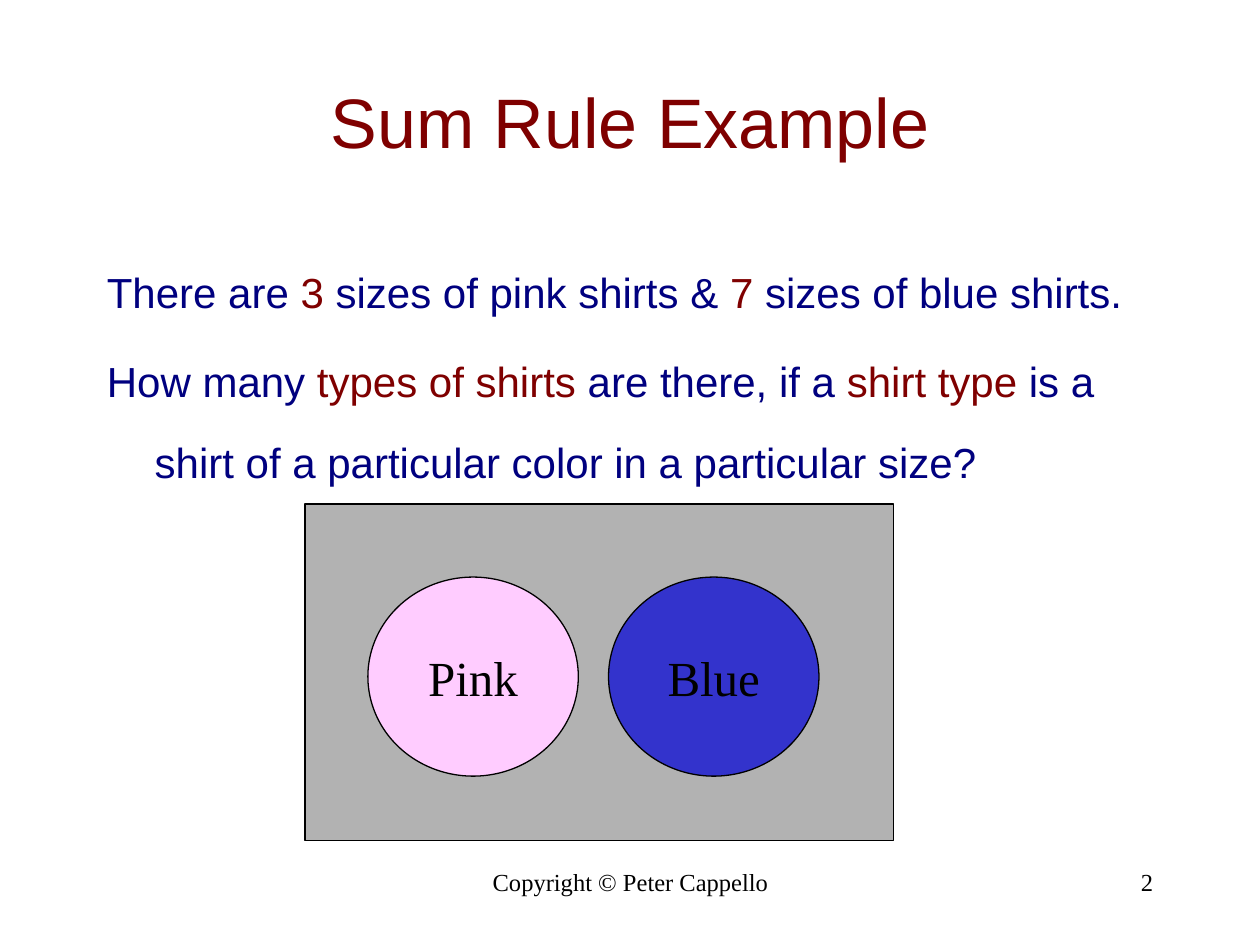
from pptx import Presentation
from pptx.dml.color import RGBColor
from pptx.enum.shapes import MSO_SHAPE as Shape
from pptx.enum.text import MSO_ANCHOR as Anchor, PP_ALIGN as Align
from pptx.util import Inches, Pt

SANS, SERIF = "Arial", "Times New Roman"
RED, NAVY, BLACK = "7F0000", "00007F", "000000"
GRAY, PINK, BLUE = "B2B2B2", "FFCCFF", "3333CC"

QUESTION = [
    [("There are ", NAVY), ("3", RED), (" sizes of pink shirts & ", NAVY),
     ("7", RED), (" sizes of blue shirts.", NAVY)],
    [("How many ", NAVY), ("types of shirts", RED), (" are there, if a ", NAVY),
     ("shirt type", RED),
     (" is a shirt of a particular color in a particular size?", NAVY)],
]


def color(value):
    """Turn a hex string into a colour."""
    return RGBColor.from_string(value)


def add_run(paragraph, text, size, font, hex_color):
    """Add one formatted run to a paragraph."""
    run = paragraph.add_run()
    run.text = text
    run.font.size = Pt(size)
    run.font.name = font
    run.font.color.rgb = color(hex_color)


def add_text_frame(slide, box, anchor=Anchor.TOP):
    """Add a wrapping text box and return its text frame."""
    frame = slide.shapes.add_textbox(*map(Inches, box)).text_frame
    frame.word_wrap = True
    frame.vertical_anchor = anchor
    return frame


def add_line(slide, box, text, size, font, hex_color, align, anchor=Anchor.TOP):
    """Add a text box that holds a single line."""
    paragraph = add_text_frame(slide, box, anchor).paragraphs[0]
    paragraph.alignment = align
    add_run(paragraph, text, size, font, hex_color)


def add_question(slide, box, paragraphs):
    """Add the body text with hanging indents and mixed colours."""
    frame = add_text_frame(slide, box)
    for index, runs in enumerate(paragraphs):
        paragraph = frame.add_paragraph() if index else frame.paragraphs[0]
        paragraph.line_spacing = 1.6
        paragraph.space_before = Pt(4.8)
        properties = paragraph._p.get_or_add_pPr()
        properties.set("marL", str(Inches(0.38)))
        properties.set("indent", str(Inches(-0.38)))
        for text, hex_color in runs:
            add_run(paragraph, text, 24, SANS, hex_color)


def add_outlined(slide, kind, box, fill, label=None):
    """Add a filled shape with a thin black outline and an optional label."""
    shape = slide.shapes.add_shape(kind, *map(Inches, box))
    shape.shadow.inherit = False
    shape.fill.solid()
    shape.fill.fore_color.rgb = color(fill)
    shape.line.color.rgb = color(BLACK)
    shape.line.width = Pt(0.75)
    if label:
        frame = shape.text_frame
        frame.word_wrap = False
        frame.vertical_anchor = Anchor.MIDDLE
        paragraph = frame.paragraphs[0]
        paragraph.alignment = Align.CENTER
        add_run(paragraph, label, 28, SERIF, BLACK)


def main():
    """Build the slide and save it."""
    presentation = Presentation()
    presentation.slide_width = Inches(10)
    presentation.slide_height = Inches(7.5)
    slide = presentation.slides.add_slide(presentation.slide_layouts[6])

    add_line(slide, (3.42, 6.83, 3.17, 0.5), "Copyright © Peter Cappello",
             14, SERIF, BLACK, Align.CENTER)
    add_line(slide, (7.17, 6.83, 2.08, 0.5), "2", 14, SERIF, BLACK, Align.RIGHT)
    add_line(slide, (0.75, 0.33, 8.5, 1.25), "Sum Rule Example",
             40, SANS, RED, Align.CENTER, Anchor.MIDDLE)
    add_question(slide, (0.75, 1.83, 8.5, 4.83), QUESTION)

    add_outlined(slide, Shape.RECTANGLE, (2.42, 4, 4.67, 2.67), GRAY)
    for left, fill, label in ((2.92, PINK, "Pink"), (4.83, BLUE, "Blue")):
        add_outlined(slide, Shape.OVAL, (left, 4.58, 1.67, 1.58), fill, label)

    presentation.save("out.pptx")


if __name__ == "__main__":
    main()
